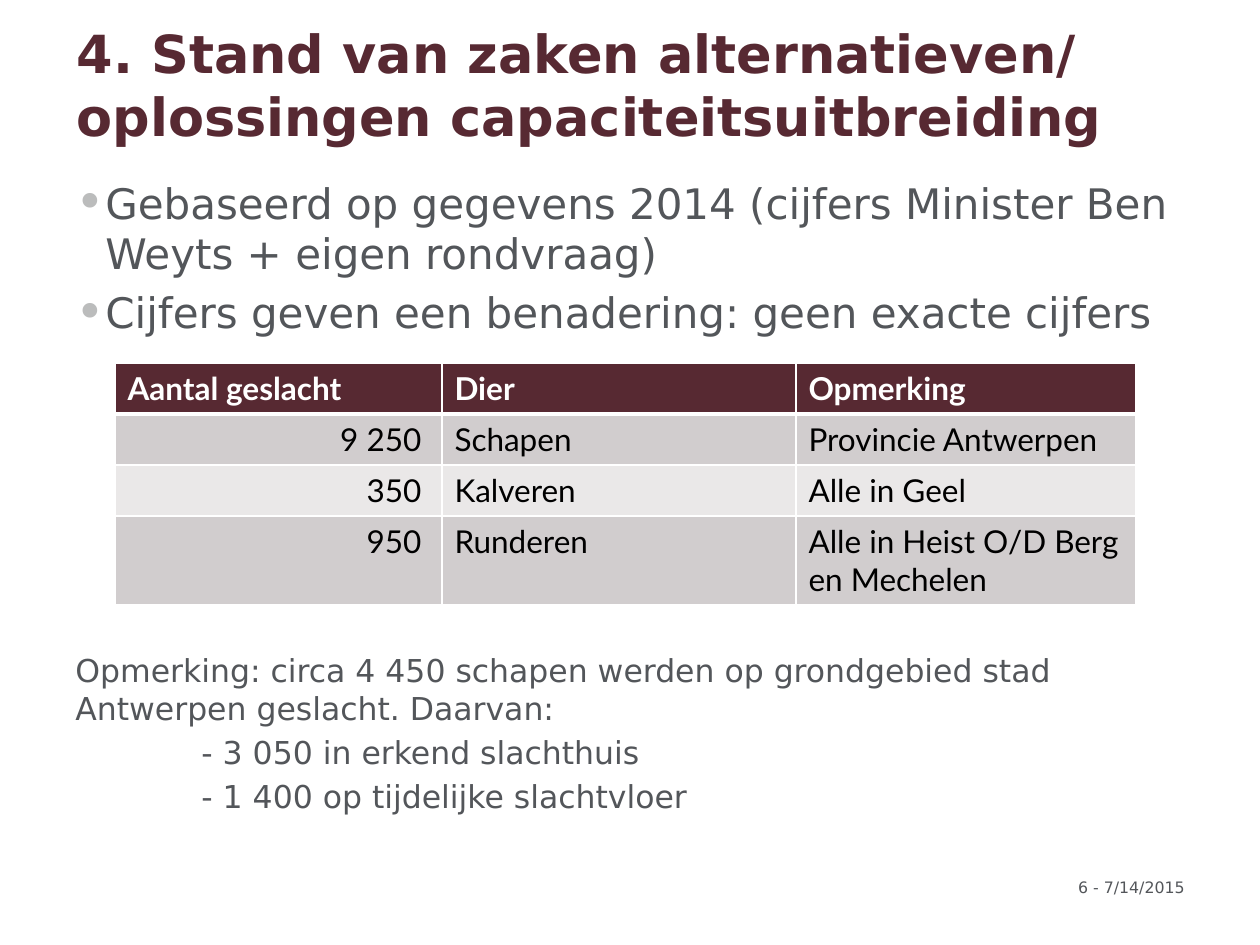
from dataclasses import dataclass

from lxml.etree import SubElement
from pptx import Presentation
from pptx.dml.color import RGBColor
from pptx.enum.text import MSO_ANCHOR, MSO_AUTO_SIZE, PP_ALIGN
from pptx.oxml.ns import qn
from pptx.util import Pt

PX = 914400 / 126
WINE = RGBColor(0x57, 0x29, 0x32)
SLATE = RGBColor(0x53, 0x56, 0x5A)
SILVER = RGBColor(0xBB, 0xBC, 0xBC)
BAND_DARK = RGBColor(0xD1, 0xCD, 0xCE)
BAND_LIGHT = RGBColor(0xEA, 0xE8, 0xE8)
WHITE = RGBColor(0xFF, 0xFF, 0xFF)
BLACK = RGBColor(0, 0, 0)
SANS, LATO = "DejaVu Sans", "Lato"


@dataclass
class Line:
    text: str
    size: int
    bullet: bool = False
    indent: int = 0
    align: PP_ALIGN = PP_ALIGN.LEFT


@dataclass
class Block:
    x: int
    y: int
    w: int
    h: int
    lines: list[Line]


BLOCKS = [
    Block(63, 171, 1182, 170, [
        Line("Gebaseerd op gegevens 2014 (cijfers Minister Ben Weyts + eigen rondvraag)",
             24, bullet=True),
        Line("Cijfers geven een benadering: geen exacte cijfers", 24, bullet=True),
    ]),
    Block(63, 645, 1150, 180, [
        Line("Opmerking: circa 4 450 schapen werden op grondgebied stad "
             "Antwerpen geslacht. Daarvan:", 18),
        Line("- 3 050 in erkend slachthuis", 18, indent=126),
        Line("- 1 400 op tijdelijke slachtvloer", 18, indent=126),
    ]),
    Block(325, 872, 872, 34, [Line("6 - 7/14/2015", 9, align=PP_ALIGN.RIGHT)]),
]
ROWS = [
    ("Aantal geslacht", "Dier", "Opmerking"),
    ("9 250 ", "Schapen", "Provincie Antwerpen"),
    ("350 ", "Kalveren", "Alle in Geel"),
    ("950 ", "Runderen", "Alle in Heist O/D Berg en Mechelen"),
]
COL_WIDTHS = (327, 354, 340)
ROW_HEIGHTS = (51, 51, 51, 88)


def emu(px: int) -> int:
    return round(px * PX)


def format_font(p, name: str, size: int, color: RGBColor, bold: bool = False) -> None:
    for r in p.runs:
        for key, value in {"name": name, "size": Pt(size), "bold": bold}.items():
            setattr(r.font, key, value)
        r.font.color.rgb = color


def add_bullet(p) -> None:
    pPr = p._p.get_or_add_pPr()
    pPr.set("marL", str(emu(30)))
    pPr.set("indent", str(-emu(30)))
    SubElement(SubElement(pPr, qn("a:buClr")), qn("a:srgbClr"), val=str(SILVER))
    SubElement(pPr, qn("a:buSzPct"), val="120000")
    SubElement(pPr, qn("a:buFont"), typeface=SANS)
    SubElement(pPr, qn("a:buChar"), char="•")


def add_block(slide, block: Block) -> None:
    sp = slide.shapes.add_textbox(*map(emu, (block.x, block.y, block.w, block.h)))
    tf = sp.text_frame
    tf.word_wrap = True
    for i, line in enumerate(block.lines):
        p = tf.add_paragraph() if i else tf.paragraphs[0]
        p.text = line.text
        p.alignment = line.align
        if line.bullet:
            add_bullet(p)
        if line.indent:
            p._p.get_or_add_pPr().set("marL", str(emu(line.indent)))
        if i:
            p.space_before = Pt(0.2 * line.size)
        format_font(p, SANS, line.size, SLATE)


def add_title(slide, text: str) -> None:
    sp = slide.shapes.title
    sp.left, sp.top, sp.width, sp.height = map(emu, (64, 20, 1134, 128))
    tf = sp.text_frame
    tf.text = text
    for key, value in {"word_wrap": True, "auto_size": MSO_AUTO_SIZE.NONE,
                       "vertical_anchor": MSO_ANCHOR.MIDDLE}.items():
        setattr(tf, key, value)
    p = tf.paragraphs[0]
    p.alignment = PP_ALIGN.LEFT
    format_font(p, SANS, 30, WINE, bold=True)


def add_borders(cell, widths: dict[str, int]) -> None:
    """Draw white cell borders; widths maps a side (L, R, T, B) to points."""
    tcPr = cell._tc.get_or_add_tcPr()
    for side, width in widths.items():
        ln = SubElement(tcPr, qn(f"a:ln{side}"), w=str(Pt(width)))
        SubElement(SubElement(ln, qn("a:solidFill")), qn("a:srgbClr"), val=str(WHITE))


def add_slaughter_table(slide) -> None:
    table = slide.shapes.add_table(
        len(ROWS), len(COL_WIDTHS),
        *map(emu, (115, 363, sum(COL_WIDTHS), sum(ROW_HEIGHTS)))).table
    for col, width in zip(table.columns, COL_WIDTHS):
        col.width = emu(width)
    for i, (row, height) in enumerate(zip(table.rows, ROW_HEIGHTS)):
        row.height = emu(height)
        header = i == 0
        fill = WINE if header else BAND_DARK if i % 2 else BAND_LIGHT
        for j, cell in enumerate(row.cells):
            add_borders(cell, {"L": 1, "R": 1, "T": 3 if i == 1 else 1,
                               "B": 3 if header else 1})
            cell.fill.solid()
            cell.fill.fore_color.rgb = fill
            cell.text = ROWS[i][j]
            p = cell.text_frame.paragraphs[0]
            if j == 0 and not header:
                p.alignment = PP_ALIGN.RIGHT
            format_font(p, LATO, 18, WHITE if header else BLACK, bold=header)


def main() -> None:
    prs = Presentation()
    prs.slide_width, prs.slide_height = emu(1260), emu(945)
    slide = prs.slides.add_slide(prs.slide_layouts[5])
    add_title(slide, "4. Stand van zaken alternatieven/ oplossingen capaciteitsuitbreiding")
    for block in BLOCKS:
        add_block(slide, block)
    add_slaughter_table(slide)
    prs.save("out.pptx")


if __name__ == "__main__":
    main()
